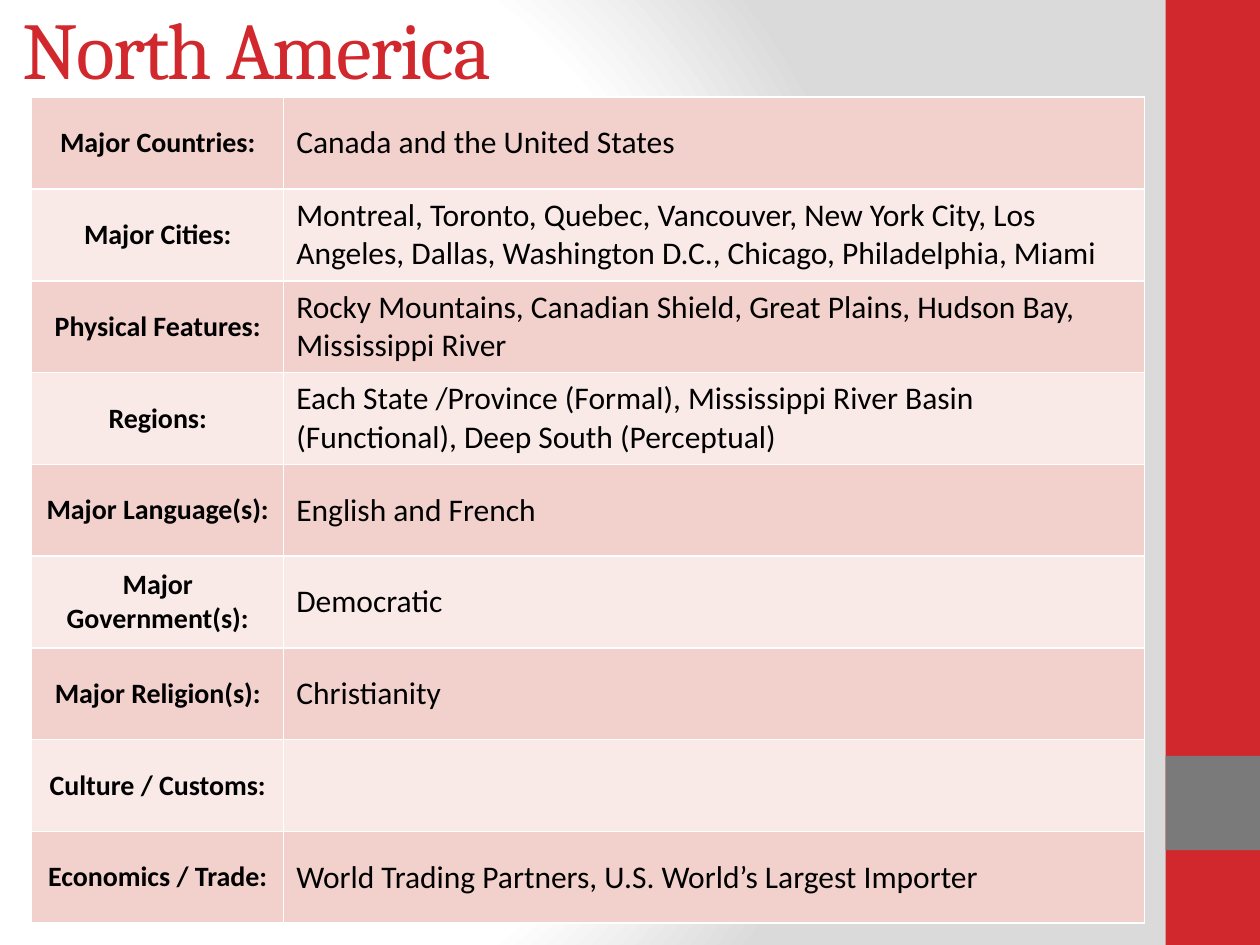
from dataclasses import dataclass

from lxml.etree import SubElement
from pptx import Presentation
from pptx.dml.color import RGBColor
from pptx.enum.shapes import MSO_SHAPE
from pptx.enum.text import MSO_ANCHOR, PP_ALIGN
from pptx.oxml import parse_xml
from pptx.oxml.ns import nsdecls, qn
from pptx.slide import Slide
from pptx.table import _Cell
from pptx.util import Cm, Pt


@dataclass(frozen=True)
class Theme:
    red: str = "D1282E"
    gray: str = "7A7A7A"
    text: str = "000000"
    border: str = "FFFFFF"
    bands: tuple[str, str] = ("F2D1CD", "F9EAE8")
    glow: str = "FFFFFF"
    edge: str = "DADADA"
    title_font: str = "Cambria"
    body_font: str = "Calibri"
    title_size: int = 46
    topic_size: int = 16
    detail_size: int = 18
    border_width: int = 1


@dataclass(frozen=True)
class Fact:
    topic: str
    detail: str


@dataclass(frozen=True)
class SideBlock:
    top: float
    height: float
    color: str


THEME = Theme()
SIDE_LEFT, SIDE_WIDTH = 23.5, 1.9
TOPIC_WIDTH, DETAIL_WIDTH, ROW_HEIGHT = 5.08, 17.35, 1.85

SIDE_BLOCKS = [
    SideBlock(0, 19.05, THEME.red),
    SideBlock(15.24, 1.9, THEME.gray),
]

FACTS = [
    Fact("Major Countries:", "Canada and the United States"),
    Fact("Major Cities:",
         "Montreal, Toronto, Quebec, Vancouver, New York City, Los Angeles, "
         "Dallas, Washington D.C., Chicago, Philadelphia, Miami"),
    Fact("Physical Features:",
         "Rocky Mountains, Canadian Shield, Great Plains, Hudson Bay, "
         "Mississippi River"),
    Fact("Regions:",
         "Each State /Province (Formal), Mississippi River Basin (Functional), "
         "Deep South (Perceptual)"),
    Fact("Major Language(s):", "English and French"),
    Fact("Major Government(s):", "Democratic"),
    Fact("Major Religion(s):", "Christianity"),
    Fact("Culture / Customs:", ""),
    Fact("Economics / Trade:",
         "World Trading Partners, U.S. World’s Largest Importer"),
]


def rgb(color: str) -> RGBColor:
    return RGBColor.from_string(color)


def set_background(slide: Slide) -> None:
    """Fill the background with a circular glow centred left of the middle."""
    stops = "".join(
        f'<a:gs pos="{percent * 1000}"><a:srgbClr val="{color}"/></a:gs>'
        for percent, color in [(0, THEME.glow), (75, THEME.glow), (100, THEME.edge)]
    )
    background = parse_xml(
        f'<p:bg {nsdecls("p", "a")}><p:bgPr><a:gradFill rotWithShape="1">'
        f'<a:gsLst>{stops}</a:gsLst><a:path path="circle">'
        '<a:fillToRect l="20000" t="50000" r="100000" b="50000"/></a:path>'
        '</a:gradFill><a:effectLst/></p:bgPr></p:bg>'
    )
    slide.element.find(qn("p:cSld")).insert(0, background)


def add_side_block(slide: Slide, block: SideBlock) -> None:
    bar = slide.shapes.add_shape(
        MSO_SHAPE.RECTANGLE,
        Cm(SIDE_LEFT), Cm(block.top), Cm(SIDE_WIDTH), Cm(block.height),
    )
    bar.shadow.inherit = False
    bar.fill.solid()
    bar.fill.fore_color.rgb = rgb(block.color)
    bar.line.fill.background()


def add_title(slide: Slide, wording: str) -> None:
    title = slide.shapes.add_textbox(Cm(0.2), Cm(-0.64), Cm(21.16), Cm(3.18))
    frame = title.text_frame
    frame.word_wrap = True
    frame.vertical_anchor = MSO_ANCHOR.MIDDLE
    paragraph = frame.paragraphs[0]
    run = paragraph.add_run()
    run.text = wording
    paragraph.font.name = THEME.title_font
    paragraph.font.size = Pt(THEME.title_size)
    paragraph.font.color.rgb = rgb(THEME.red)
    run.font._element.set("spc", "-100")


def set_borders(cell: _Cell) -> None:
    properties = cell._tc.get_or_add_tcPr()
    for position, side in enumerate(("lnL", "lnR", "lnT", "lnB")):
        line = properties.makeelement(
            qn(f"a:{side}"), {"w": str(Pt(THEME.border_width))}
        )
        fill = SubElement(line, qn("a:solidFill"))
        SubElement(fill, qn("a:srgbClr"), val=THEME.border)
        properties.insert(position, line)


def fill_cell(cell: _Cell, wording: str, band: str, size: int,
              bold: bool, alignment: PP_ALIGN) -> None:
    cell.text = wording
    cell.vertical_anchor = MSO_ANCHOR.MIDDLE
    cell.fill.solid()
    cell.fill.fore_color.rgb = rgb(band)
    set_borders(cell)
    paragraph = cell.text_frame.paragraphs[0]
    paragraph.alignment = alignment
    paragraph.font.name = THEME.body_font
    paragraph.font.size = Pt(size)
    paragraph.font.bold = bold
    paragraph.font.color.rgb = rgb(THEME.text)


def add_fact_table(slide: Slide, facts: list[Fact]) -> None:
    table = slide.shapes.add_table(
        len(facts), 2, Cm(0.64), Cm(1.96),
        Cm(TOPIC_WIDTH + DETAIL_WIDTH), Cm(ROW_HEIGHT * len(facts)),
    ).table
    table.first_row = False
    table.horz_banding = False
    table.columns[0].width = Cm(TOPIC_WIDTH)
    table.columns[1].width = Cm(DETAIL_WIDTH)
    for index, fact in enumerate(facts):
        table.rows[index].height = Cm(ROW_HEIGHT)
        band = THEME.bands[index % 2]
        fill_cell(table.cell(index, 0), fact.topic, band,
                  THEME.topic_size, True, PP_ALIGN.CENTER)
        fill_cell(table.cell(index, 1), fact.detail, band,
                  THEME.detail_size, False, PP_ALIGN.LEFT)


def main() -> None:
    presentation = Presentation()
    presentation.slide_width = Cm(25.4)
    presentation.slide_height = Cm(19.05)
    slide = presentation.slides.add_slide(presentation.slide_layouts[6])
    set_background(slide)
    for block in SIDE_BLOCKS:
        add_side_block(slide, block)
    add_title(slide, "North America")
    add_fact_table(slide, FACTS)
    presentation.save("out.pptx")


if __name__ == "__main__":
    main()
